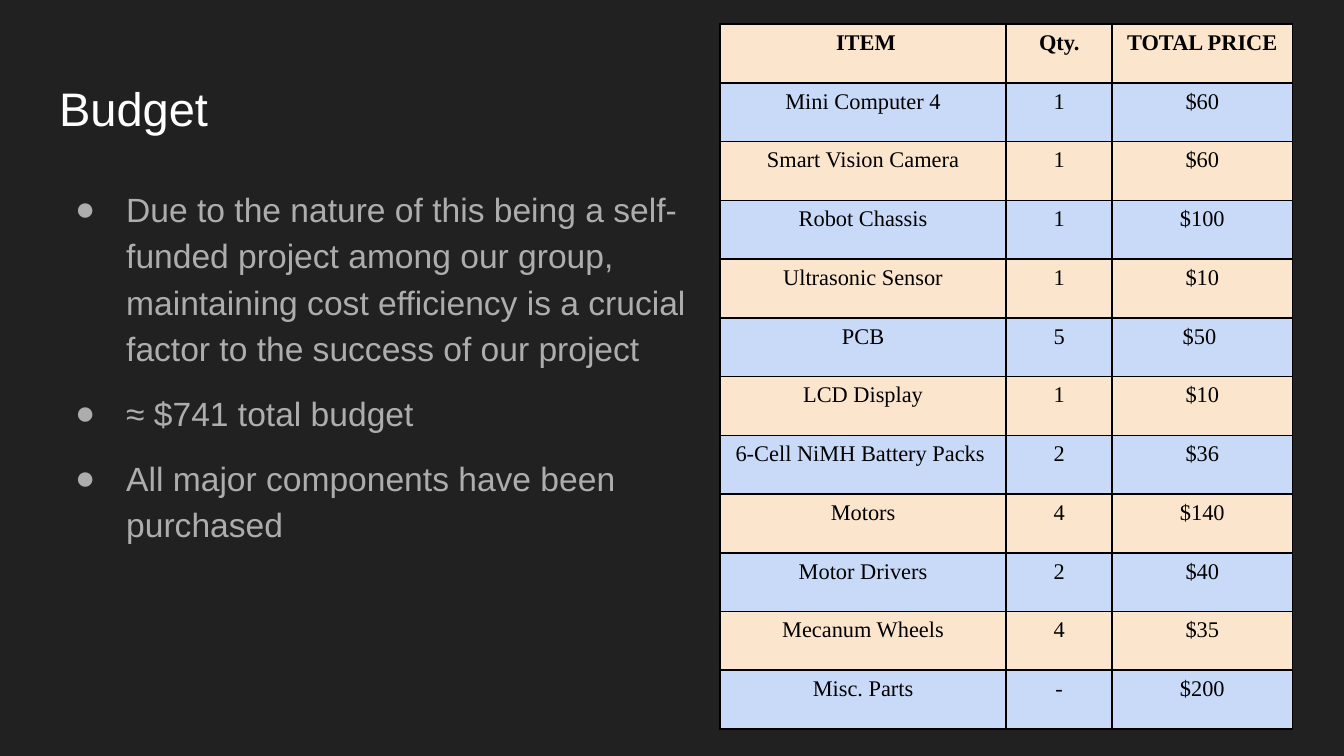
from dataclasses import dataclass

from lxml.etree import SubElement as Sub
from pptx import Presentation
from pptx.dml.color import RGBColor as RGB
from pptx.enum.text import MSO_ANCHOR as Anchor, PP_ALIGN as Align
from pptx.oxml.ns import qn
from pptx.util import Emu, Inches, Pt

WIDE = Inches(10)
HIGH = Emu(WIDE * 9 // 16)
DARK = RGB(0x21, 0x21, 0x21)
WHITE = RGB(0xFF, 0xFF, 0xFF)
GREY = RGB(0xAD, 0xAD, 0xAD)
BLACK = RGB(0, 0, 0)
PEACH = RGB(0xFC, 0xE5, 0xCD)
BLUE = RGB(0xC9, 0xDA, 0xF8)

POINTS = (
    "Due to the nature of this being a self-funded project among our group, "
    "maintaining cost efficiency is a crucial factor to the success of our project",
    "≈ $741 total budget",
    "All major components have been purchased",
)


@dataclass(frozen=True)
class Item:
    name: str
    count: str
    price: str


ITEMS = (
    Item(" ITEM", "Qty.", "TOTAL PRICE"),
    Item("Mini Computer 4", "1", "$60"),
    Item("Smart Vision Camera", "1", "$60"),
    Item("Robot Chassis", "1", "$100"),
    Item("Ultrasonic Sensor", "1", "$10"),
    Item("PCB", "5", "$50 "),
    Item("LCD Display", "1", "$10"),
    Item("6-Cell NiMH Battery Packs ", "2", "$36"),
    Item("Motors", "4", "$140"),
    Item("Motor Drivers", "2", "$40"),
    Item("Mecanum Wheels", "4", "$35"),
    Item("Misc. Parts", "-", "$200"),
)


@dataclass(frozen=True)
class Area:
    """A box in percent of the slide's width and height."""
    left: float
    top: float
    width: float
    height: float

    def frame(self) -> tuple[Emu, Emu, Emu, Emu]:
        return (Emu(int(self.left * WIDE / 100)), Emu(int(self.top * HIGH / 100)),
                Emu(int(self.width * WIDE / 100)), Emu(int(self.height * HIGH / 100)))


HEAD = Area(3.41, 8.65, 93.2, 11.2)
BODY = Area(3.41, 22.4, 55.4, 66.5)
COSTS = Area(53.57, 3.2, 42.6, 93.3)
COLS = (0.5, 0.185, 0.315)  # shares of the table's width


def style(para, size: float, font: str, color: RGB, bold: bool = False) -> None:
    for run in para.runs:
        run.font.size, run.font.name, run.font.bold = Pt(size), font, bold
        run.font.color.rgb = color


def add_box(slide, area: Area, text: str):
    frame = slide.shapes.add_textbox(*area.frame()).text_frame
    frame.word_wrap = True
    frame.margin_left = frame.margin_right = Inches(0.1)
    frame.margin_top = frame.margin_bottom = Inches(0.1)
    frame.text = text
    return frame


def add_bullet(para) -> None:
    props = para._p.get_or_add_pPr()
    props.set("marL", str(Inches(0.5)))
    props.set("indent", str(Inches(-0.38)))
    tint = Sub(props, qn("a:buClr"))
    Sub(tint, qn("a:srgbClr"), val=str(GREY))
    Sub(props, qn("a:buFont"), typeface="Arial")
    Sub(props, qn("a:buChar"), char="●")


def add_points(slide) -> None:
    frame = add_box(slide, BODY, "\n".join(POINTS))
    for row, para in enumerate(frame.paragraphs):
        para.line_spacing = 1.15
        para.space_before = Pt(10 if row else 0)
        add_bullet(para)
        style(para, 18, "Arial", GREY)


def add_edges(cell) -> None:
    """Draw a thin black line on all four sides, before the cell's fill."""
    props = cell._tc.get_or_add_tcPr()
    for side in ("lnL", "lnR", "lnT", "lnB"):
        line = Sub(props, qn(f"a:{side}"), w=str(Pt(1)))
        fill = Sub(line, qn("a:solidFill"))
        Sub(fill, qn("a:srgbClr"), val=str(BLACK))


def fill_cell(cell, text: str, row: int) -> None:
    add_edges(cell)
    cell.fill.solid()
    cell.fill.fore_color.rgb = BLUE if row % 2 else PEACH
    cell.margin_left = cell.margin_right = Inches(0.02)
    cell.margin_top = cell.margin_bottom = Inches(0.02)
    cell.text_frame.text = text
    para = cell.text_frame.paragraphs[0]
    para.alignment = Align.CENTER
    para.line_spacing = 1.15
    para.space_before = Pt(12)
    style(para, 12, "Times New Roman", BLACK, bold=row == 0)


def add_costs(slide) -> None:
    left, top, width, height = COSTS.frame()
    table = slide.shapes.add_table(
        len(ITEMS), len(COLS), left, top, width, height).table
    for col, share in zip(table.columns, COLS):
        col.width = Emu(int(width * share))
    for row, item in enumerate(ITEMS):
        table.rows[row].height = Emu(height // len(ITEMS))
        for col, text in enumerate((item.name, item.count, item.price)):
            fill_cell(table.cell(row, col), text, row)


def main() -> None:
    deck = Presentation()
    deck.slide_width, deck.slide_height = WIDE, HIGH
    slide = deck.slides.add_slide(deck.slide_layouts[6])
    slide.background.fill.solid()
    slide.background.fill.fore_color.rgb = DARK

    head = add_box(slide, HEAD, "Budget")
    head.vertical_anchor = Anchor.MIDDLE
    style(head.paragraphs[0], 25.2, "Arial", WHITE)
    add_points(slide)
    add_costs(slide)
    deck.save("out.pptx")


if __name__ == "__main__":
    main()
